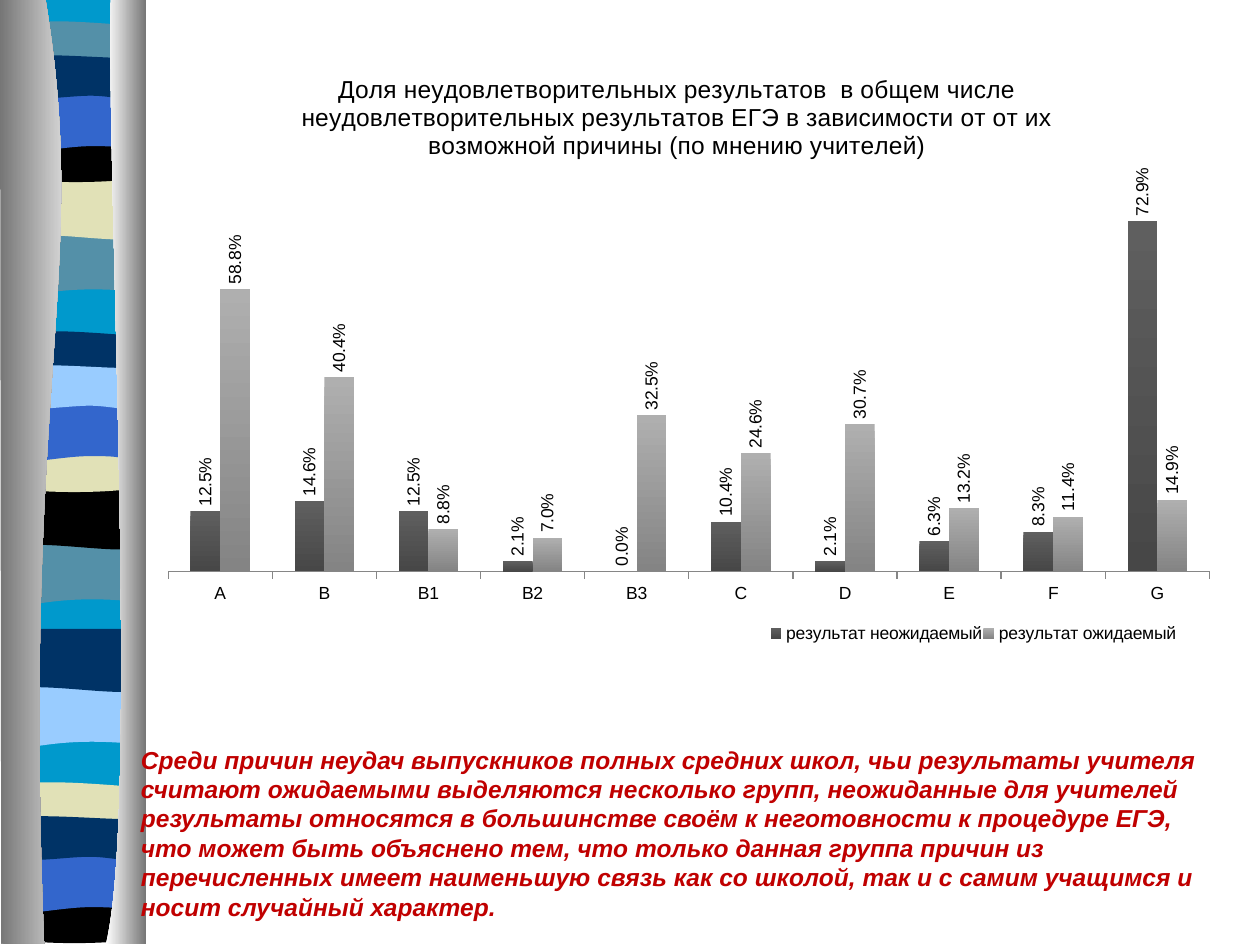
"""Build a slide with a striped side border, a column chart and a conclusion."""
from dataclasses import dataclass

from pptx import Presentation
from pptx.chart.data import CategoryChartData
from pptx.dml.color import RGBColor
from pptx.enum import chart as ch
from pptx.oxml import parse_xml
from pptx.oxml import ns
from pptx.util import Inches, Pt


@dataclass(frozen=True)
class Theme:
    font: str = "Arial"
    ink: str = "000000"
    accent: str = "C00000"
    aqua: str = "0099CC"
    steel: str = "5490A8"
    cream: str = "E1E1B7"
    blue: str = "3366CC"
    navy: str = "003366"
    sky: str = "99CCFF"
    dark: str = "767676"
    light: str = "FFFFFF"
    axis: str = "868686"
    series: tuple = (("5F5F5F", "474747"), ("AFAFAF", "848484"))
    body: int = 14
    title: int = 14
    label: int = 10


T = Theme()

TITLE = ("Доля неудовлетворительных результатов  в общем числе "
         "неудовлетворительных результатов ЕГЭ в зависимости от от их "
         "возможной причины (по мнению учителей)")
CONCLUSION = (
    "Среди причин неудач выпускников полных средних школ, чьи результаты учителя "
    "считают ожидаемыми выделяются несколько групп, неожиданные для учителей "
    "результаты относятся в большинстве своём к неготовности к процедуре ЕГЭ, "
    "что может быть объяснено тем, что только данная группа причин из "
    "перечисленных имеет наименьшую связь как со школой, так и с самим учащимся "
    "и носит случайный характер.")
CATEGORIES = ["A", "B", "B1", "B2", "B3", "C", "D", "E", "F", "G"]
SERIES = {
    "результат неожидаемый":
        [0.125, 0.146, 0.125, 0.021, 0, 0.104, 0.021, 0.063, 0.083, 0.729],
    "результат ожидаемый":
        [0.588, 0.404, 0.088, 0.07, 0.325, 0.246, 0.307, 0.132, 0.114, 0.149],
}

BANDS = [
    [(1.14, 1.85), (1.14, 2.32), (0.39, 2.24, 0.24, 2.4, 0.06, 2.32), (0.06, 1.85)],
    [(1.14, 1.4), (1.14, 1.88), (0.96, 1.95, 0.39, 1.82, 0.06, 1.88), (0.06, 1.4)],
    [(1.14, 0.21), (1.14, 0.45), (0.96, 0.49, 0.24, 0.49, 0.06, 0.45), (0.06, 0.21),
     (0.13, 0.16, 0.29, 0.17, 0.47, 0.17), (0.65, 0.17, 1, 0.2, 1.14, 0.21)],
    [(1.14, 1.08), (1.14, 1.4), (0.96, 1.46, 0.24, 1.46, 0.06, 1.4), (0.06, 1.08),
     (0.72, 1.13, 0.91, 1.08, 1.14, 1.08)],
    [(1.14, 0.74), (1.14, 1.22), (0.97, 1.16, 0.9, 1.16, 0.72, 1.16),
     (0.54, 1.16, 0.22, 1.22, 0.06, 1.22), (0.06, 0.74)],
    [(1.14, 0.46), (1.14, 0.76), (1.07, 0.82, 0.9, 0.76, 0.72, 0.76),
     (0.54, 0.76, 0.17, 0.82, 0.06, 0.76), (0.06, 0.46),
     (0.21, 0.41, 0.79, 0.46, 0.97, 0.46), (1.15, 0.46, 1.11, 0.46, 1.14, 0.46)],
]
REPEATS = [
    (0, [0] * 6, (T.steel, T.cream, T.steel, T.ink, T.blue, T.navy)),
    (-0.01, [2.46] * 6, (T.steel, T.ink, T.navy, T.cream, T.blue, T.sky)),
    (-0.01, [3.59] * 2 + [6.04] * 4,
     (T.sky, T.navy, T.cream, T.ink, T.blue, T.navy)),
]


def rgb(value):
    return RGBColor.from_string(value)


def set_gradient(fill, start, end, angle):
    """Fill with a two-stop linear gradient."""
    fill.gradient()
    fill.gradient_angle = angle
    for stop, color, position in zip(fill.gradient_stops, (start, end), (0, 1)):
        stop.color.rgb = rgb(color)
        stop.position = position


def bend_curves(sp, path):
    """Join the three points of each six-number segment into one cubic curve."""
    lines = iter(list(sp._element.iter(ns.qn("a:lnTo"))))
    for seg in path[1:]:
        parts = [next(lines) for _ in range(len(seg) // 2)]
        if len(parts) == 3:
            curve = parse_xml(f'<a:cubicBezTo {ns.nsdecls("a")}/>')
            parts[0].addprevious(curve)
            for line in parts:
                curve.append(line[0])
                line.getparent().remove(line)


def add_outline(s, path, colors, dx=0, dy=0):
    """Draw a closed outline in one colour or a left-to-right gradient."""
    points = [(Inches(seg[i] + dx), Inches(seg[i + 1] + dy))
              for seg in path for i in range(0, len(seg), 2)]
    builder = s.shapes.build_freeform(*points[0])
    builder.add_line_segments(points[1:], close=True)
    sp = builder.convert_to_shape()
    bend_curves(sp, path)
    sp.shadow.inherit = False
    sp.line.fill.background()
    if len(colors) == 2:
        set_gradient(sp.fill, *colors, 0)
    else:
        sp.fill.solid()
        sp.fill.fore_color.rgb = rgb(colors[0])


def add_border(s):
    """Draw the striped band between two shaded pillars."""
    add_outline(s, [(1.14, -0.01), (1.14, 7.47), (0.06, 7.47), (0.06, -0.01)], [T.aqua])
    for dx, offsets, colors in REPEATS:
        for band, dy, color in zip(BANDS, offsets, colors):
            add_outline(s, band, [color], dx, dy)
    add_outline(s, [(0.36, -0.01), (0.72, 2.16, 0.17, 2.96, 0.35, 7.49), (0.01, 7.49),
                    (0, -0.01)], [T.dark, T.light])
    add_outline(s, [(0.88, -0.01), (0.84, 1.25, 1.11, 6.46, 0.84, 7.49), (1.16, 7.49),
                    (1.16, 0)], [T.light, T.dark])


def add_conclusion(s):
    """Add the conclusion paragraph under the chart."""
    tf = s.shapes.add_textbox(Inches(1.02), Inches(5.86), Inches(8.83),
                              Inches(1.51)).text_frame
    tf.word_wrap = True
    p = tf.paragraphs[0]
    p.text = CONCLUSION
    p.font.name, p.font.size = T.font, Pt(T.body)
    p.font.bold = p.font.italic = True
    p.font.color.rgb = rgb(T.accent)


def set_layout(element, index, inner=False, **box):
    """Place a chart part by fractions of the chart area."""
    for old in element.findall(ns.qn("c:layout")):
        element.remove(old)
    target = '<c:layoutTarget val="inner"/>' if inner else ""
    modes = "".join(f'<c:{k}Mode val="edge"/>' for k in box if k in "xy")
    sizes = "".join(f'<c:{k} val="{v}"/>' for k, v in box.items())
    element.insert(index, parse_xml(
        f'<c:layout {ns.nsdecls("c")}><c:manualLayout>{target}{modes}{sizes}'
        '</c:manualLayout></c:layout>'))


def style_series(series, colors):
    """Give a series its gradient and upright value labels."""
    series.invert_if_negative = False
    set_gradient(series.format.fill, *colors, 270)
    labels = series.data_labels
    labels.show_value = True
    labels.number_format, labels.number_format_is_linked = "0.0%", False
    labels.position = ch.XL_LABEL_POSITION.OUTSIDE_END
    labels.font.size = Pt(T.label)
    body = labels._element.find(ns.qn("c:txPr")).find(ns.qn("a:bodyPr"))
    body.set("rot", "-5400000")
    body.set("vert", "horz")


def style_axes(chart):
    """Show the category axis only."""
    value, category = chart.value_axis, chart.category_axis
    value.minimum_scale, value.maximum_scale = 0, 0.8
    value.has_major_gridlines = value.visible = False
    category.major_tick_mark = ch.XL_TICK_MARK.OUTSIDE
    category.format.line.color.rgb = rgb(T.axis)


def add_results_chart(s):
    """Add the clustered columns with title and legend."""
    data = CategoryChartData(number_format="0.0%")
    data.categories = CATEGORIES
    for name, values in SERIES.items():
        data.add_series(name, values)
    chart = s.shapes.add_chart(ch.XL_CHART_TYPE.COLUMN_CLUSTERED, Inches(1.25),
                               Inches(0.55), Inches(8.52), Inches(4.69), data).chart
    chart.font.name, chart.font.size = T.font, Pt(T.label)
    chart.font.color.rgb = rgb(T.ink)
    plot = chart.plots[0]
    plot.gap_width, plot.overlap, plot.vary_by_categories = 150, 0, False
    for series, colors in zip(plot.series, T.series):
        style_series(series, colors)
    style_axes(chart)

    title = chart.chart_title
    p = title.text_frame.paragraphs[0]
    p.text = TITLE
    p.font.name, p.font.size, p.font.bold = T.font, Pt(T.title), False
    p.font.color.rgb = rgb(T.ink)
    set_layout(title._element, 1, x=0.13, y=0)

    chart.has_legend = True
    chart.legend.position = ch.XL_LEGEND_POSITION.RIGHT
    chart.legend.include_in_layout = False
    set_layout(chart.legend._element, 1, x=0.57, y=0.93, w=0.38, h=0.05)
    set_layout(plot._element.getparent(), 0, inner=True, x=0.01, y=0.2, w=0.97, h=0.65)


def main():
    prs = Presentation()
    prs.slide_width, prs.slide_height = Inches(10), Inches(7.5)
    s = prs.slides.add_slide(prs.slide_layouts[6])
    add_border(s)
    add_conclusion(s)
    add_results_chart(s)
    prs.save("out.pptx")


if __name__ == "__main__":
    main()
